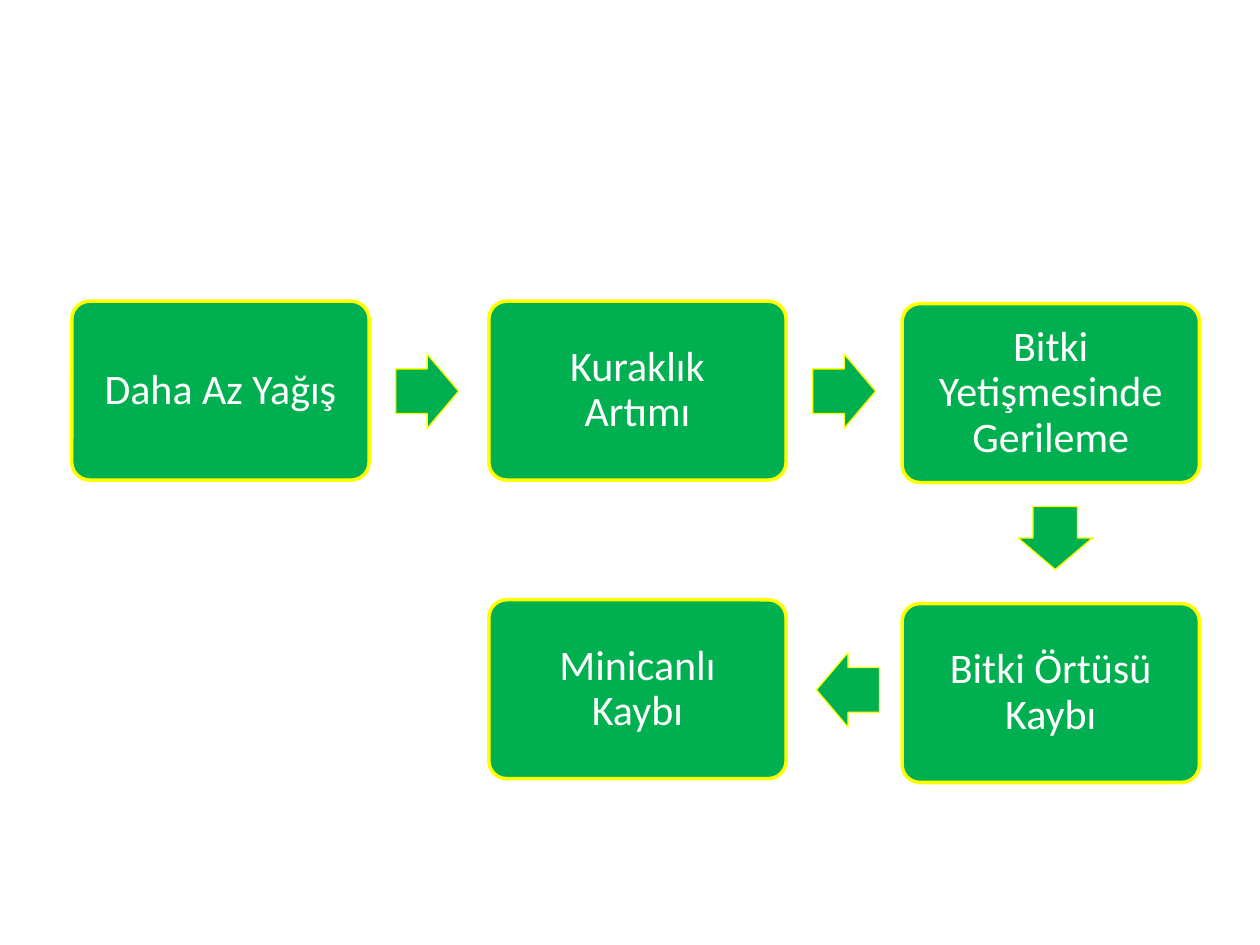
"""Builds a slide with a five-step flow from less rain to loss of small life."""
from pptx import Presentation
from pptx.dml.color import RGBColor
from pptx.enum.shapes import MSO_SHAPE
from pptx.enum.text import MSO_ANCHOR, PP_ALIGN
from pptx.util import Inches, Pt

BOX = MSO_SHAPE.ROUNDED_RECTANGLE
RIGHT = MSO_SHAPE.RIGHT_ARROW
DOWN = MSO_SHAPE.DOWN_ARROW
LEFT = MSO_SHAPE.LEFT_ARROW
MIDDLE = MSO_ANCHOR.MIDDLE
CENTER = PP_ALIGN.CENTER

COLORS = {"fill": "00B050", "line": "FFFF00", "text": "FFFFFF"}
STEPS = [
    ("Daha Az Yağış", 0.57, 2.39),
    ("Kuraklık Artımı", 3.88, 2.39),
    ("Bitki Yetişmesinde Gerileme", 7.16, 2.41),
    ("Bitki Örtüsü Kaybı", 7.16, 4.79),
    ("Minicanlı Kaybı", 3.88, 4.76),
]
ARROWS = [
    (RIGHT, 3.14, 2.81),
    (RIGHT, 6.45, 2.81),
    (DOWN, 8.08, 4.02),
    (LEFT, 6.48, 5.18),
]
BOX_W, BOX_H = 2.36, 1.42
LONG, SHORT = 0.59, 0.5
INSET = Inches(0.18)
FRAME = {"word_wrap": True, "vertical_anchor": MIDDLE,
         "margin_left": INSET, "margin_right": INSET,
         "margin_top": INSET, "margin_bottom": INSET}
PARA = {"alignment": CENTER, "line_spacing": 0.9}
FONT = {"name": "Calibri", "size": Pt(24)}


def color(key):
    return RGBColor.from_string(COLORS[key])


def apply(item, values):
    for key, value in values.items():
        setattr(item, key, value)


def add_shape(slide, kind, place, width, adjust):
    shape = slide.shapes.add_shape(kind, *map(Inches, place))
    shape.shadow.inherit = False
    shape.fill.solid()
    shape.fill.fore_color.rgb = color("fill")
    shape.line.color.rgb = color("line")
    shape.line.width = Pt(width)
    for index, value in enumerate(adjust):
        shape.adjustments[index] = value
    return shape


def add_step(slide, text, left, top):
    shape = add_shape(slide, BOX, (left, top, BOX_W, BOX_H), 2, [0.1])
    frame = shape.text_frame
    apply(frame, FRAME)
    para = frame.paragraphs[0]
    apply(para, PARA)
    run = para.add_run()
    run.text = text
    apply(run.font, FONT)
    run.font.color.rgb = color("text")


def add_arrow(slide, kind, left, top):
    size = (LONG, SHORT) if kind == DOWN else (SHORT, LONG)
    add_shape(slide, kind, (left, top, *size), 0.75, [0.6, 0.5])


def main():
    deck = Presentation()
    deck.slide_width, deck.slide_height = Inches(10), Inches(7.5)
    slide = deck.slides.add_slide(deck.slide_layouts[6])
    for step in STEPS:
        add_step(slide, *step)
    for arrow in ARROWS:
        add_arrow(slide, *arrow)
    deck.save("out.pptx")


if __name__ == "__main__":
    main()
